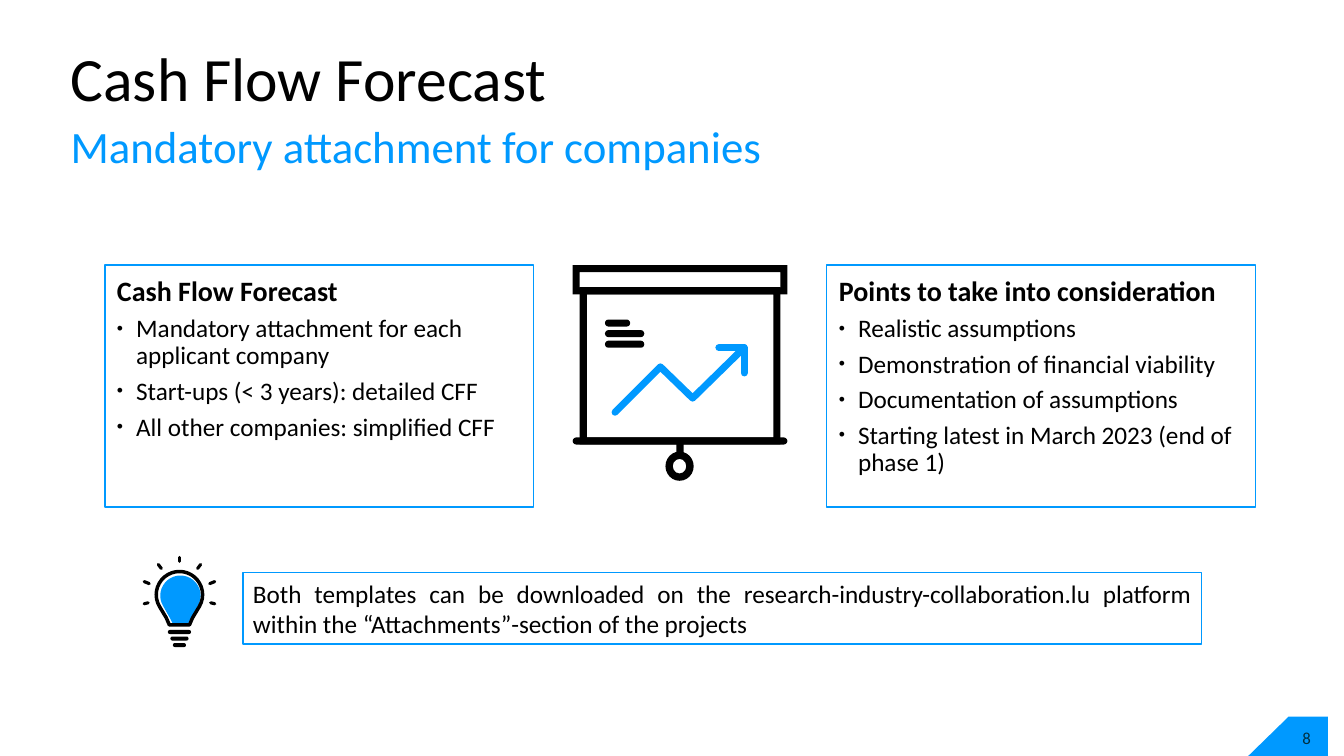
import dataclasses
import math

import lxml.etree
import pptx
import pptx.dml.color
import pptx.enum.shapes
import pptx.enum.text
import pptx.oxml.ns
import pptx.util

Inches = pptx.util.Inches
Pt = pptx.util.Pt
qn = pptx.oxml.ns.qn
Preset = pptx.enum.shapes.MSO_SHAPE
Align = pptx.enum.text.PP_ALIGN
Anchor = pptx.enum.text.MSO_ANCHOR


@dataclasses.dataclass(frozen=True)
class Theme:
    font: str = "Calibri"
    black: pptx.dml.color.RGBColor = pptx.dml.color.RGBColor(0, 0, 0)
    blue: pptx.dml.color.RGBColor = pptx.dml.color.RGBColor(0, 0x99, 0xFF)
    white: pptx.dml.color.RGBColor = pptx.dml.color.RGBColor(255, 255, 255)
    navy: pptx.dml.color.RGBColor = pptx.dml.color.RGBColor(0, 0x2F, 0x41)
    title: int = 44
    subtitle: int = 32
    heading: int = 20
    body: int = 18
    number: int = 12


theme = Theme()


def write_text(paragraph, text, size, color=theme.black, bold=False, **formats):
    """Fill a paragraph and apply its paragraph formats."""
    defaults = {"alignment": Align.LEFT, "space_before": Pt(0), "space_after": Pt(0)}
    for name, value in (defaults | formats).items():
        setattr(paragraph, name, value)
    run = paragraph.add_run()
    run.text = text
    for name, value in {"name": theme.font, "size": Pt(size), "bold": bold}.items():
        setattr(run.font, name, value)
    run.font.color.rgb = color


def prepare_frame(shape, box, margins, anchor=Anchor.TOP):
    """Place a text shape and set up its frame."""
    for name, value in zip(("left", "top", "width", "height"), box):
        setattr(shape, name, Inches(value))
    frame = shape.text_frame
    for side, value in zip(("left", "top", "right", "bottom"), margins):
        setattr(frame, f"margin_{side}", Inches(value))
    frame.word_wrap = True
    frame.auto_size = pptx.enum.text.MSO_AUTO_SIZE.NONE
    frame.vertical_anchor = anchor
    return frame


presentation = pptx.Presentation()
presentation.slide_width = Inches(13.33)
presentation.slide_height = Inches(7.5)
slide = presentation.slides.add_slide(presentation.slide_layouts.get_by_name("Two Content"))
shapes = slide.shapes
title, left_list, right_list = slide.placeholders

# Title and subtitle
frame = prepare_frame(title, (0.7, 0.15, 12, 1.36), (0, 0, 0, 0), Anchor.MIDDLE)
write_text(frame.paragraphs[0], "Cash Flow Forecast", theme.title, line_spacing=0.8)
subtitle = shapes.add_textbox(0, 0, 0, 0)
frame = prepare_frame(subtitle, (0.7, 1.24, 12, 0.65), (0, 0, 0, 0))
write_text(frame.paragraphs[0], "Mandatory attachment for companies", theme.subtitle,
           theme.blue, line_spacing=0.9)

# Two framed lists
lists = [
    (left_list, 1.04, "Cash Flow Forecast", [
        "Mandatory attachment for each applicant company",
        "Start-ups (< 3 years): detailed CFF",
        "All other companies: simplified CFF",
    ]),
    (right_list, 8.2, "Points to take into consideration", [
        "Realistic assumptions",
        "Demonstration of financial viability",
        "Documentation of assumptions",
        "Starting latest in March 2023 (end of phase 1)",
    ]),
]
list_spacing = {"line_spacing": 0.9, "space_after": Pt(6)}
for placeholder, left, heading, items in lists:
    frame = prepare_frame(placeholder, (left, 2.63, 4.25, 2.4), (0.12, 0.12, 0.12, 0.28))
    placeholder.fill.solid()
    placeholder.fill.fore_color.rgb = theme.white
    placeholder.line.color.rgb = theme.blue
    placeholder.line.width = Pt(1)
    paragraph = frame.paragraphs[0]
    properties = paragraph._p.get_or_add_pPr()
    properties.set("marL", "0")
    properties.set("indent", "0")
    lxml.etree.SubElement(properties, qn("a:buNone"))
    write_text(paragraph, heading, theme.heading, bold=True, **list_spacing)
    for item in items:
        paragraph = frame.add_paragraph()
        properties = paragraph._p.get_or_add_pPr()
        properties.set("marL", str(Inches(0.19)))
        properties.set("indent", str(Inches(-0.19)))
        lxml.etree.SubElement(properties, qn("a:buSzPct")).set("val", "70000")
        lxml.etree.SubElement(properties, qn("a:buChar")).set("char", "•")
        write_text(paragraph, item, theme.body, **list_spacing)

# Download hint
hint = shapes.add_shape(Preset.RECTANGLE, 0, 0, 0, 0)
hint.shadow.inherit = False
hint.fill.background()
hint.line.color.rgb = theme.blue
hint.line.width = Pt(1)
frame = prepare_frame(hint, (2.41, 5.68, 9.51, 0.71), (0.1, 0.05, 0.1, 0.05), Anchor.MIDDLE)
write_text(
    frame.paragraphs[0],
    "Both templates can be downloaded on the research-industry-collaboration.lu platform "
    "within the “Attachments”-section of the projects",
    theme.body, alignment=Align.JUSTIFY)

# Solid parts of the flip chart and the bulb base: preset, box, adjustment
solid_parts = [
    (Preset.FRAME, (5.68, 2.63, 2.13, 0.29), 0.24),
    (Preset.FRAME, (5.75, 2.85, 1.99, 1.56), 0.045),
    (Preset.ROUNDED_RECTANGLE, (5.68, 4.34, 2.13, 0.07), 0.5),
    (Preset.RECTANGLE, (6.71, 4.4, 0.07, 0.1), None),
    (Preset.DONUT, (6.6, 4.48, 0.28, 0.29), 0.26),
]
for row, width in enumerate((0.25, 0.39, 0.39)):
    solid_parts.append((Preset.ROUNDED_RECTANGLE, (6, 3.17 + row * 0.105, width, 0.07), 0.5))
bulb_center = 1.78
for row, width in enumerate((0.23, 0.18, 0.13)):
    box = (bulb_center - width / 2, 6.25 + row * 0.065, width, 0.04)
    solid_parts.append((Preset.ROUNDED_RECTANGLE, box, 0.5))
for preset, box, adjustment in solid_parts:
    part = shapes.add_shape(preset, *map(Inches, box))
    part.shadow.inherit = False
    part.fill.solid()
    part.fill.fore_color.rgb = theme.black
    part.line.fill.background()
    if adjustment is not None:
        part.adjustments[0] = adjustment

# Outlines: points, closed, fill, line colour, line width
outlines = [
    ([(13.17, 7.11), (12.78, 7.11), (12.38, 7.5), (13.17, 7.5)], True, theme.blue, None, 0),
    ([(6.1, 4.09), (6.55, 3.64), (6.87, 3.95), (7.38, 3.45)], False, None, theme.blue, 5),
    ([(7.13, 3.45), (7.38, 3.45), (7.38, 3.7)], False, None, theme.blue, 5),
]
bulbs = [
    (1.79, 5.91, 0.2, [(0.1, 6.14), (0.08, 6.18)], theme.blue, None),
    (bulb_center, 5.9, 0.23, [(0.13, 6.13), (0.1, 6.2)], None, theme.black),
]
for x, y, radius, neck, fill, color in bulbs:
    points = [(x + radius * math.cos(math.radians(angle)), y + radius * math.sin(math.radians(angle)))
              for angle in range(150, 391, 10)]
    points += [(x + half, level) for half, level in neck]
    points += [(x - half, level) for half, level in reversed(neck)]
    outlines.append((points, True, fill, color, 2.5))

strokes = []
for points, closed, fill, color, width in outlines:
    corners = [(Inches(x), Inches(y)) for x, y in points]
    builder = shapes.build_freeform(*corners[0])
    builder.add_line_segments(corners[1:], close=closed)
    outline = builder.convert_to_shape()
    outline.shadow.inherit = False
    if fill is None:
        outline.fill.background()
    else:
        outline.fill.solid()
        outline.fill.fore_color.rgb = fill
    if color is None:
        outline.line.fill.background()
    else:
        strokes.append((outline, color, width))

# Rays around the bulb, mirrored about its centre
rays = [(0, 5.53, 0, 5.57)]
for side in (-1, 1):
    for x1, y1, x2, y2 in [(0.21, 5.6, 0.18, 5.64), (0.35, 5.77, 0.3, 5.79), (0.35, 5.99, 0.31, 5.98)]:
        rays.append((side * x1, y1, side * x2, y2))
for x1, y1, x2, y2 in rays:
    ends = map(Inches, (bulb_center + x1, y1, bulb_center + x2, y2))
    ray = shapes.add_connector(pptx.enum.shapes.MSO_CONNECTOR.STRAIGHT, *ends)
    strokes.append((ray, theme.black, 2.25))

# Round ends and joins for every stroke
for stroke, color, width in strokes:
    stroke.line.color.rgb = color
    stroke.line.width = Pt(width)
    properties = stroke._element.spPr
    line = properties.find(qn("a:ln"))
    line.set("cap", "rnd")
    lxml.etree.SubElement(line, qn("a:round"))
    if properties.find(qn("a:effectLst")) is None:
        lxml.etree.SubElement(properties, qn("a:effectLst"))

# Slide number
number = shapes.add_textbox(0, 0, 0, 0)
frame = prepare_frame(number, (12.71, 7.14, 0.5, 0.36), (0.04, 0.05, 0.04, 0.05), Anchor.MIDDLE)
write_text(frame.paragraphs[0], "8", theme.number, theme.navy, alignment=Align.CENTER)

presentation.save("out.pptx")
